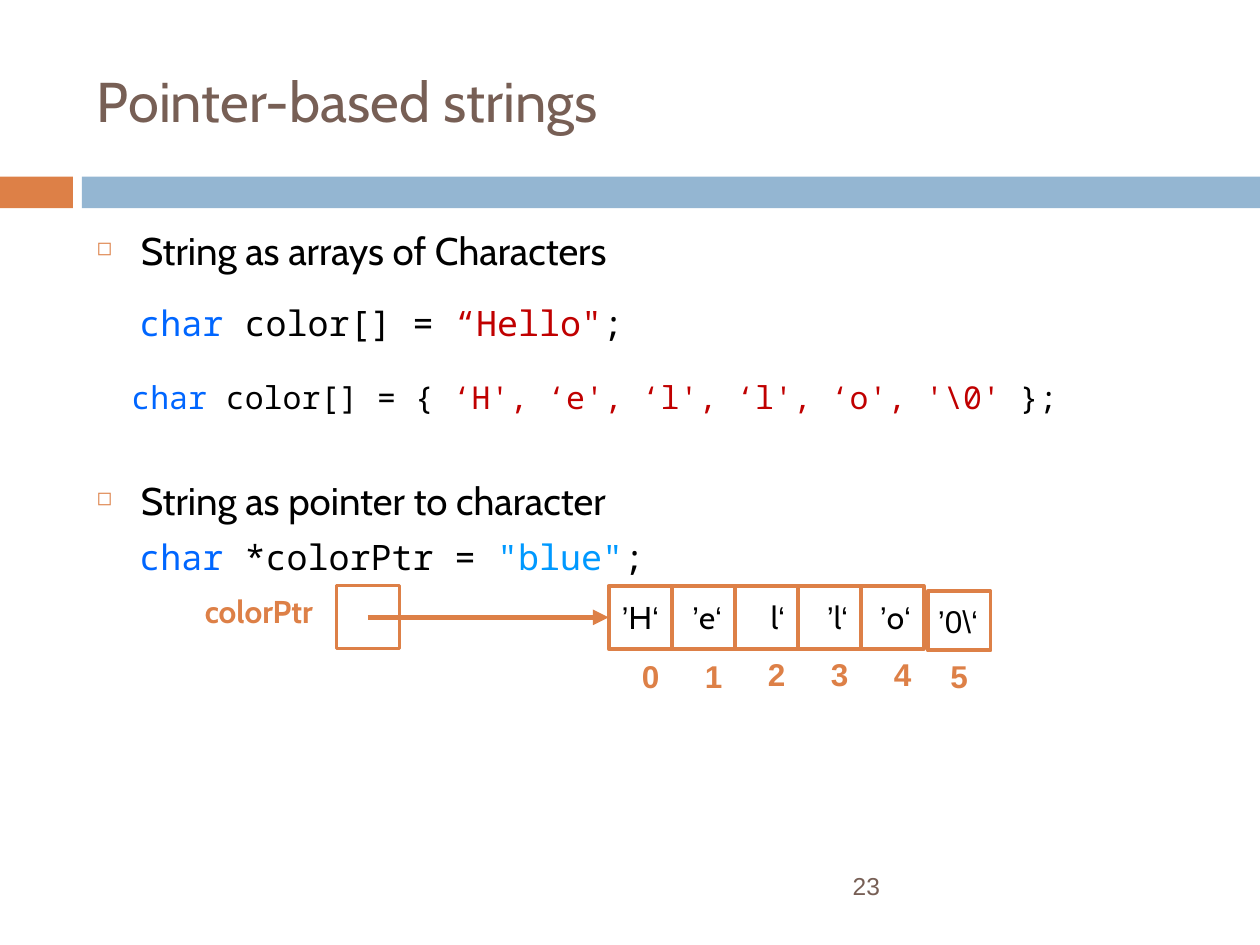
from lxml import etree
from pptx import Presentation
from pptx.dml.color import RGBColor
from pptx.enum.shapes import MSO_CONNECTOR, MSO_SHAPE
from pptx.enum.text import MSO_ANCHOR, PP_ALIGN
from pptx.oxml.ns import qn
from pptx.util import Cm, Pt

RECT = MSO_SHAPE.RECTANGLE
STRAIGHT = MSO_CONNECTOR.STRAIGHT
TOP, MIDDLE = MSO_ANCHOR.TOP, MSO_ANCHOR.MIDDLE
LEFT, RIGHT = PP_ALIGN.LEFT, PP_ALIGN.RIGHT
LEFT_SIDE = 1

SANS, MONO, DIGITS = "Cabin", "Noto Sans Mono", "Arial"
ORANGE, BLUE, BROWN, BLACK = "DD8047", "94B6D2", "775F55", "000000"
KEYWORD, RED, LITERAL = "0066FF", "C00000", "0099FF"

# Content
TITLE = "Pointer-based strings"
PAGE_NUMBER = "23"
# font, size, left margin (cm), space before (pt), coloured pieces
BODY = [
    (SANS, 22, 0.89, 0, [("String as arrays of Characters", BLACK)]),
    (MONO, 20, 0.86, 16, [("char", KEYWORD), (" color[] = ", BLACK),
                          ("“Hello\"", RED), (";", BLACK)]),
    (MONO, 18, 0.7, 20, [("char", KEYWORD), (" color[] = { ", BLACK),
                         ("‘H', ‘e', ‘l', ‘l', ‘o', '\\0' ", RED),
                         ("};", BLACK)]),
    (SANS, 22, 0.89, 35, [("String as pointer to character", BLACK)]),
    (MONO, 20, 0.86, 7, [("char", KEYWORD), (" *colorPtr = ", BLACK),
                         ("\"blue\"", LITERAL), (";", BLACK)]),
]
POINTER_NAME = "colorPtr"
CHARACTERS = ["‘H’", "‘e’", "‘l", "‘l’", "‘o’"]
TERMINATOR = "‘\\0’"

# Measures in cm
CELL = 1.27
ARRAY_LEFT, ARRAY_TOP = 12.27, 11.81
POINTER_LEFT = 6.78
INDEX_TOPS = [13.13, 13.13, 13.08, 13.08, 13.08]
BARS = [(0, 1.47, ORANGE), (1.65, 23.75, BLUE)]


def color(hex_code):
    return RGBColor.from_string(hex_code)


def style(run, font, size, hex_code, bold=False):
    run.font.name = font
    run.font.size = Pt(size)
    run.font.bold = bold
    run.font.color.rgb = color(hex_code)


def write_rtl(frame, text, size, hex_code, align, bold=False):
    """Right-to-left line; digits and signs take the complex-script font."""
    line = frame.paragraphs[0]
    line.text = text
    line.alignment = align
    line._p.get_or_add_pPr().set("rtl", "1")
    run = line.runs[0]
    style(run, SANS, size, hex_code, bold)
    etree.SubElement(run._r.get_or_add_rPr(), qn("a:cs"), typeface=DIGITS)


def add_box(left, top, width, height, fill=None, line_width=None):
    box = slide.shapes.add_shape(RECT, Cm(left), Cm(top), Cm(width), Cm(height))
    box.shadow.inherit = False
    if fill:
        box.fill.solid()
        box.fill.fore_color.rgb = color(fill)
    else:
        box.fill.background()
    if line_width:
        box.line.color.rgb = color(ORANGE)
        box.line.width = Pt(line_width)
    else:
        box.line.fill.background()
    return box


def add_cell(text, left, top, height=CELL):
    cell = add_box(left, top, CELL, height, line_width=2.25)
    cell.text_frame.word_wrap = False
    cell.text_frame.vertical_anchor = MIDDLE
    write_rtl(cell.text_frame, text, 18, BLACK, RIGHT)
    return cell


def add_frame(left, top, width, height, anchor=TOP):
    box = slide.shapes.add_textbox(Cm(left), Cm(top), Cm(width), Cm(height))
    box.text_frame.word_wrap = True
    box.text_frame.vertical_anchor = anchor
    return box.text_frame


def add_label(text, left, top, width):
    write_rtl(add_frame(left, top, width, 1.02), text, 18, ORANGE, RIGHT, bold=True)


def add_bullet(properties):
    bullet_color = etree.SubElement(properties, qn("a:buClr"))
    etree.SubElement(bullet_color, qn("a:srgbClr"), val=ORANGE)
    etree.SubElement(properties, qn("a:buSzPct"), val="50000")
    etree.SubElement(properties, qn("a:buChar"), char="◻")


prs = Presentation()
prs.slide_width, prs.slide_height = Cm(25.4), Cm(19.05)
slide = prs.slides.add_slide(prs.slide_layouts[5])

# Title, bars and page number
title = slide.shapes.title
title.left, title.top, title.width, title.height = Cm(1.7), Cm(0.64), Cm(22.66), Cm(2.74)
title.text_frame.text = TITLE
title.text_frame.vertical_anchor = MIDDLE
title.text_frame.paragraphs[0].alignment = LEFT
style(title.text_frame.paragraphs[0].runs[0], SANS, 32, BROWN)

for left, width, fill in BARS:
    add_box(left, 3.56, width, 0.64, fill=fill)

write_rtl(add_frame(16.94, 17.35, 7.42, 1.02, MIDDLE), PAGE_NUMBER, 14, BROWN, LEFT)

# Bullets and code lines
body = add_frame(1.7, 4.45, 22.66, 12.5)
for number, (font, size, margin, before, pieces) in enumerate(BODY):
    line = body.add_paragraph() if number else body.paragraphs[0]
    line.space_before = Pt(before)
    properties = line._p.get_or_add_pPr()
    properties.set("marL", str(Cm(margin)))
    if font == SANS:
        properties.set("indent", str(-Cm(margin)))
        add_bullet(properties)
    for text, hex_code in pieces:
        run = line.add_run()
        run.text = text
        style(run, font, size, hex_code)

# Character array with its indexes
cells = []
for index, (character, top) in enumerate(zip(CHARACTERS, INDEX_TOPS)):
    left = ARRAY_LEFT + index * CELL
    cells.append(add_cell(character, left, ARRAY_TOP))
    add_label(str(index), left, top, CELL)
add_cell(TERMINATOR, 18.7, 11.92, 1.19)
add_label(str(len(CHARACTERS)), 18.49, 13.13, CELL)

# Pointer and its arrow to the first character
add_label(POINTER_NAME, 2.11, ARRAY_TOP, 4.45)
add_box(POINTER_LEFT, ARRAY_TOP, CELL, CELL, line_width=1.5)
middle = Cm(ARRAY_TOP + CELL / 2)
arrow = slide.shapes.add_connector(STRAIGHT, Cm(POINTER_LEFT + CELL / 2), middle,
                                   Cm(ARRAY_LEFT), middle)
arrow.end_connect(cells[0], LEFT_SIDE)
arrow.line.color.rgb = color(ORANGE)
arrow.line.width = Pt(3)
etree.SubElement(arrow.line._get_or_add_ln(), qn("a:tailEnd"), type="triangle")
etree.SubElement(arrow._element.spPr, qn("a:effectLst"))

prs.save("out.pptx")
